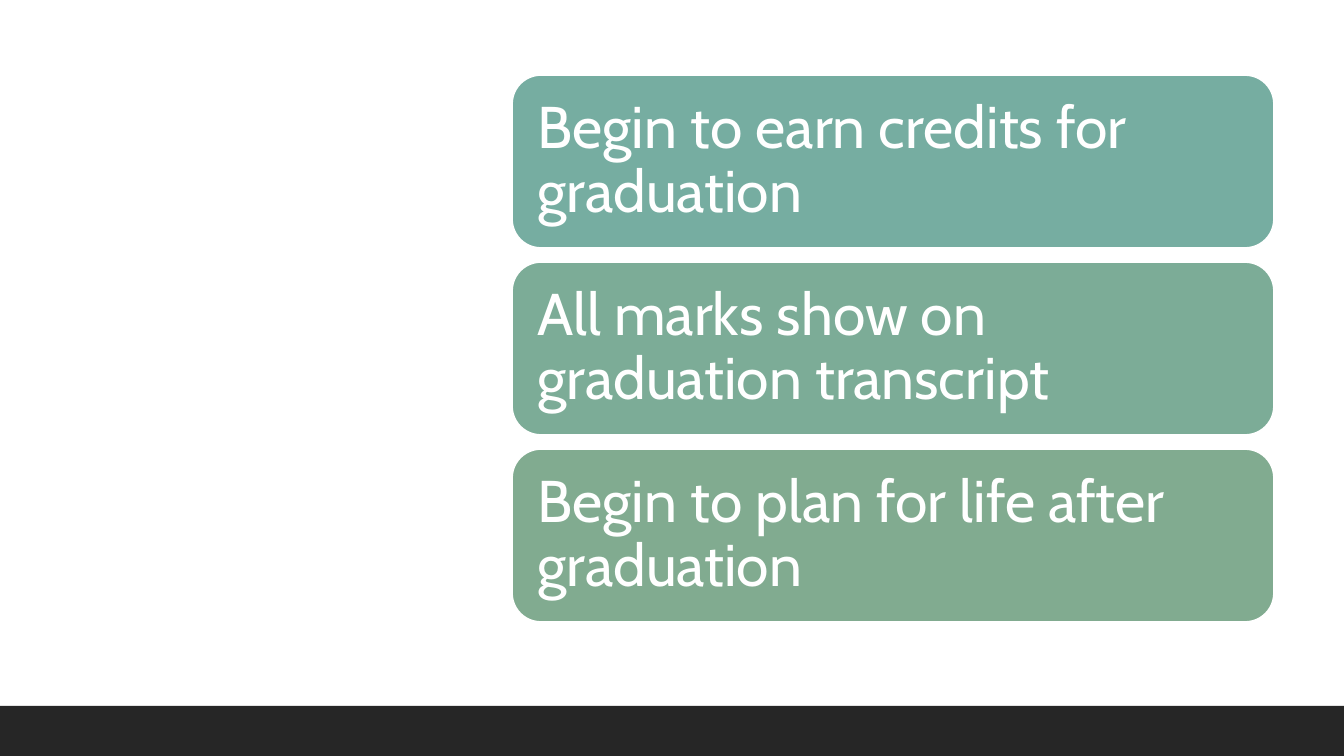
from pptx import Presentation
from pptx.dml.color import RGBColor
from pptx.enum import shapes, text
from pptx.util import Pt

PX = 914400 / 100.8
WHITE = "FFFFFF"


def px(*sizes):
    return [round(n * PX) for n in sizes]


def add_box(kind, place, fill, words="", line=None, size=42, font="Cabin", color=WHITE):
    box = slide.shapes.add_shape(kind, *px(*place))
    box.shadow.inherit = False
    box.fill.solid()
    box.fill.fore_color.rgb = RGBColor.from_string(fill)
    if line:
        box.line.color.rgb = RGBColor.from_string(line)
        box.line.width = Pt(1.25)
    else:
        box.line.fill.background()
    if words:
        frame = box.text_frame
        frame.word_wrap = True
        frame.vertical_anchor = text.MSO_ANCHOR.MIDDLE
        inset = px(17)[0]
        frame.margin_left = frame.margin_right = inset
        frame.margin_top = frame.margin_bottom = inset
        para = frame.paragraphs[0]
        para.alignment = text.PP_ALIGN.LEFT
        para.line_spacing = 0.9
        run = para.add_run()
        run.text = words
        run.font.size = Pt(size)
        run.font.name = font
        run.font.color.rgb = RGBColor.from_string(color)
    return box


deck = Presentation()
deck.slide_width, deck.slide_height = px(1344, 756)
slide = deck.slides.add_slide(deck.slide_layouts[6])
slide.background.fill.solid()
slide.background.fill.fore_color.rgb = RGBColor.from_string(WHITE)

add_box(shapes.MSO_SHAPE.RECTANGLE, (0, 706, 1344, 50), "262626")

cards = [
    ("Begin to earn credits for graduation", "76ADA1"),
    ("All marks show on graduation transcript", "7CAC97"),
    ("Begin to plan for life after graduation", "81AB90"),
]
left, top, width, height, step = 512, 75, 762, 173, 187
for i, (words, fill) in enumerate(cards):
    place = left, top + i * step, width, height
    add_box(shapes.MSO_SHAPE.ROUNDED_RECTANGLE, place, fill, words, line=WHITE)

deck.save("out.pptx")
